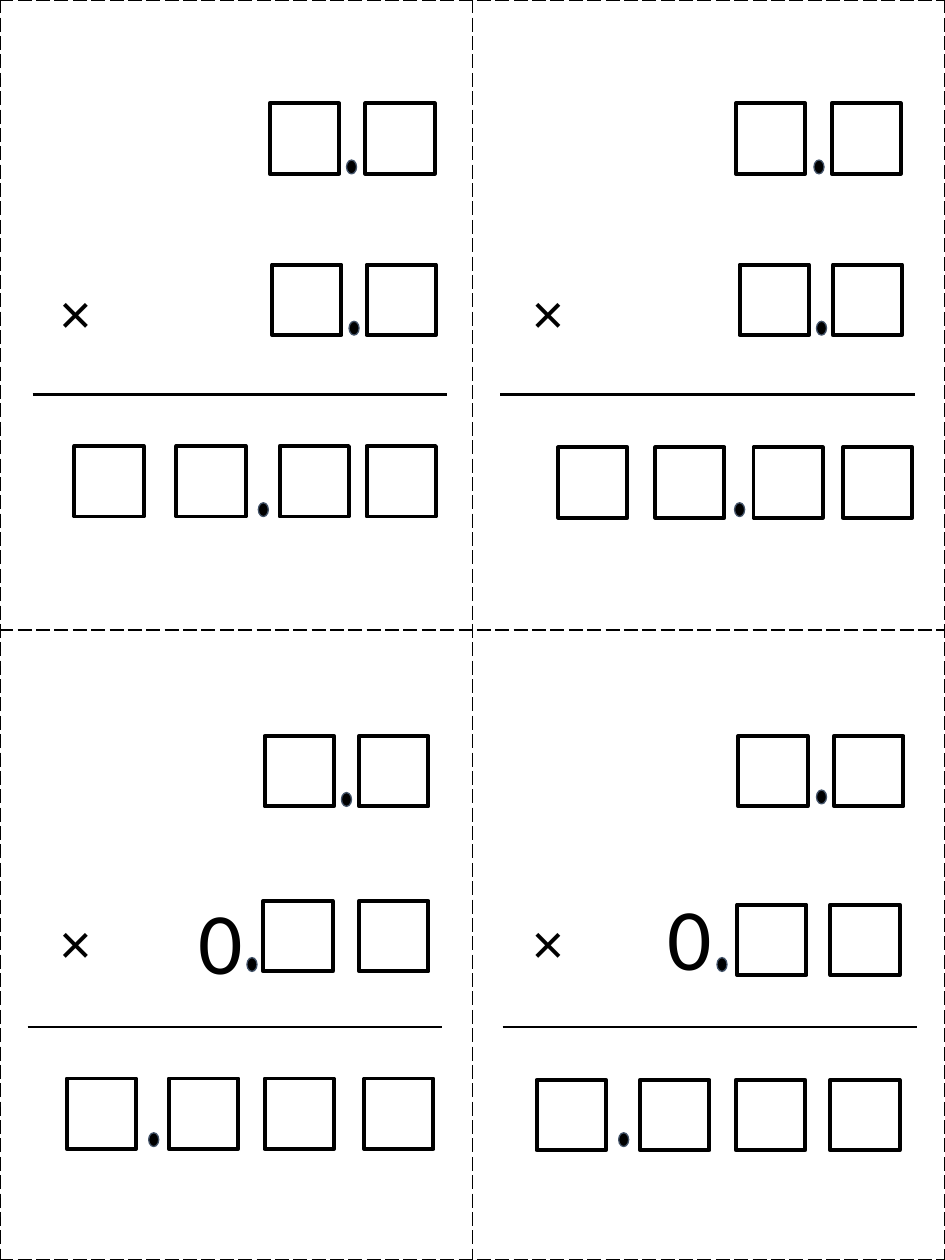
"""Build a sheet of four decimal multiplication cards with empty digit boxes."""
from lxml import etree
from pptx import Presentation
from pptx.dml.color import RGBColor
from pptx.enum.shapes import MSO_CONNECTOR, MSO_SHAPE
from pptx.enum.text import MSO_ANCHOR, MSO_AUTO_SIZE
from pptx.oxml import parse_xml
from pptx.oxml.ns import nsdecls, qn
from pptx.util import Inches, Pt

RECTANGLE = MSO_SHAPE.RECTANGLE
DOT = MSO_SHAPE.FLOWCHART_CONNECTOR
STRAIGHT = MSO_CONNECTOR.STRAIGHT
MIDDLE = MSO_ANCHOR.MIDDLE
GROW = MSO_AUTO_SIZE.SHAPE_TO_FIT_TEXT

COLORS = {"ink": "000000", "paper": "FFFFFF", "dot_edge": "44546A"}
COLUMN, ROW = 3.75, 5
BOX_WIDTH, BOX_HEIGHT = 0.55, 0.56
DOT_WIDTH, DOT_HEIGHT = 0.08, 0.11
RULE_LENGTH = 3.29

CARDS = [
    {"column": 0, "row": 0, "rule": (0.26, 3.13), "zero": None,
     "boxes": [(0.82, [2.14, 2.9]), (2.1, [2.16, 2.91]), (3.54, [0.59, 1.4, 2.22, 2.91])],
     "dots": [(2.75, 1.27), (2.77, 2.55), (2.05, 3.99)]},
    {"column": 1, "row": 0, "rule": (0.22, 3.13), "zero": None,
     "boxes": [(0.82, [2.09, 2.85]), (2.1, [2.12, 2.86]), (3.55, [0.68, 1.45, 2.23, 2.94])],
     "dots": [(2.71, 1.27), (2.73, 2.55), (2.08, 3.99)]},
    {"column": 0, "row": 1, "rule": (0.22, 3.15), "zero": (1.48, 1.94),
     "boxes": [(0.84, [2.1, 2.85]), (2.15, [2.09, 2.85]), (3.56, [0.53, 1.34, 2.1, 2.89])],
     "dots": [(2.71, 1.29), (1.96, 2.6), (1.18, 3.99)]},
    {"column": 1, "row": 1, "rule": (0.24, 3.15), "zero": (1.45, 1.91),
     "boxes": [(0.84, [2.11, 2.87]), (2.18, [2.1, 2.84]), (3.57, [0.51, 1.33, 2.09, 2.84])],
     "dots": [(2.73, 1.27), (1.94, 2.6), (1.16, 3.99)]},
]


def add_mark(kind, left, top, width, height, fill, edge, weight):
    mark = page.shapes.add_shape(kind, Inches(left), Inches(top), Inches(width), Inches(height))
    mark.shadow.inherit = False
    mark.fill.solid()
    mark.fill.fore_color.rgb = RGBColor.from_string(COLORS[fill])
    mark.line.color.rgb = RGBColor.from_string(COLORS[edge])
    mark.line.width = Pt(weight)


def write(paragraph, text, font, size):
    paragraph.text = text
    paragraph.font.name = font
    paragraph.font.size = Pt(size)
    paragraph.font.color.rgb = RGBColor.from_string(COLORS["ink"])


deck = Presentation()
deck.slide_width, deck.slide_height = Inches(2 * COLUMN), Inches(2 * ROW)
page = deck.slides.add_slide(deck.slide_layouts[6])

table = page.shapes.add_table(2, 2, 0, 0, deck.slide_width, deck.slide_height).table
table.first_row = table.horz_banding = False
for cell in table.iter_cells():
    cell.vertical_anchor = MIDDLE
    cell.margin_left = Inches(0.47)
    write(cell.text_frame.paragraphs[0], "×", "Arial", 32)
    cell.fill.background()
    properties = cell._tc.get_or_add_tcPr()
    for index, side in enumerate(("lnL", "lnR", "lnT", "lnB")):
        border = parse_xml(
            f'<a:{side} {nsdecls("a")} w="{Pt(1)}"><a:solidFill>'
            f'<a:srgbClr val="{COLORS["ink"]}"/></a:solidFill>'
            f'<a:prstDash val="lgDash"/></a:{side}>')
        properties.insert(index, border)

for card in CARDS:
    x, y = card["column"] * COLUMN, card["row"] * ROW
    for top, lefts in card["boxes"]:
        for left in lefts:
            add_mark(RECTANGLE, x + left, y + top, BOX_WIDTH, BOX_HEIGHT, "paper", "ink", 2.25)
    for left, top in card["dots"]:
        add_mark(DOT, x + left, y + top, DOT_WIDTH, DOT_HEIGHT, "ink", "dot_edge", 0.75)

    left, top = card["rule"]
    rule = page.shapes.add_connector(
        STRAIGHT, Inches(x + left), Inches(y + top),
        Inches(x + left + RULE_LENGTH), Inches(y + top))
    rule.line.color.rgb = RGBColor.from_string(COLORS["ink"])
    rule.line.width = Pt(1.5)
    etree.SubElement(rule._element.spPr, qn("a:effectLst"))

    if card["zero"]:
        left, top = card["zero"]
        zero = page.shapes.add_textbox(
            Inches(x + left), Inches(y + top), Inches(0.56), Inches(1.04))
        frame = zero.text_frame
        frame.word_wrap = True
        frame.auto_size = GROW
        frame.margin_left = frame.margin_right = Inches(0.1)
        frame.margin_top = frame.margin_bottom = Inches(0.1)
        write(frame.paragraphs[0], "0", "Calibri", 50)

deck.save("out.pptx")
